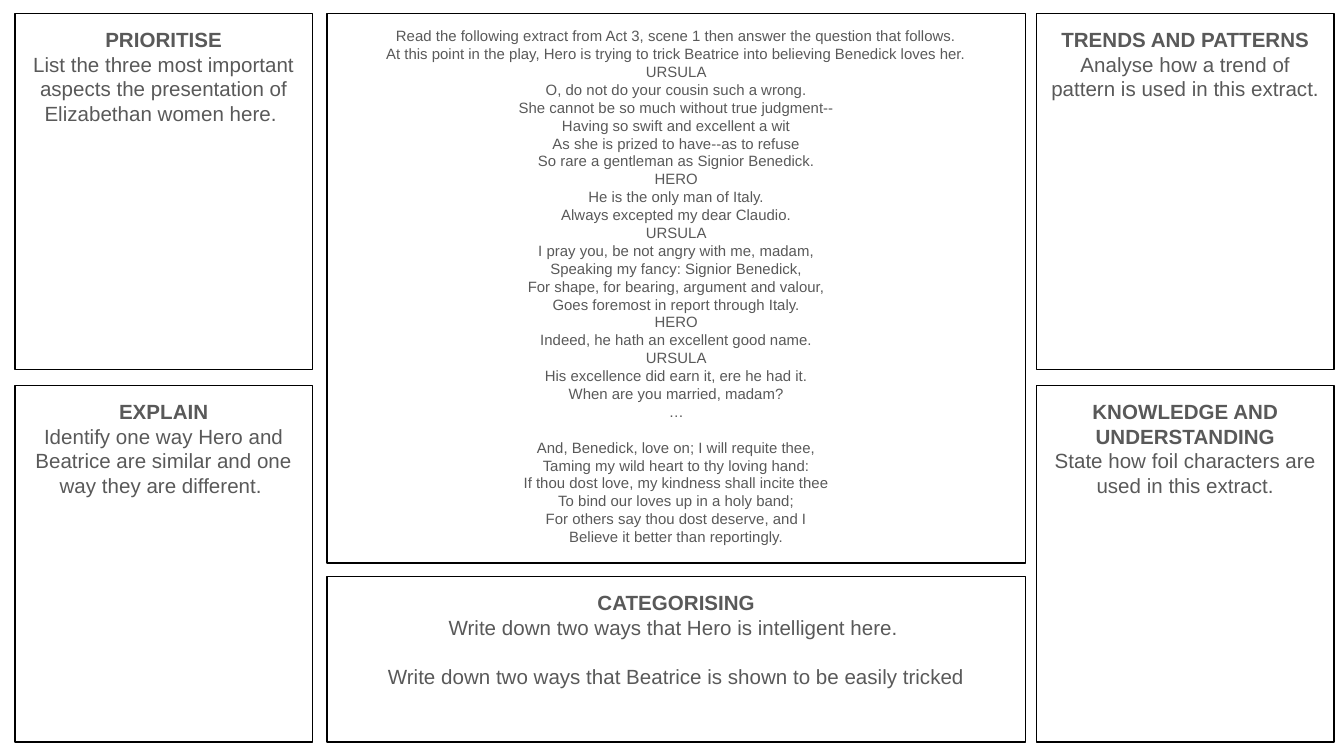
from pptx import Presentation
from pptx.dml.color import RGBColor
from pptx.enum.text import MSO_ANCHOR, MSO_AUTO_SIZE, PP_ALIGN
from pptx.util import Pt

COLORS = {"background": "FFFFFF", "border": "000000", "text": "595959"}
FONT = "Arial"
INSET = 7.2

TOP, BOTTOM = 7.2, 397.5
LEFT_COLUMN, CENTRE_COLUMN, RIGHT_COLUMN = 8.1, 175.1, 555.4
SIDE_WIDTH, CENTRE_WIDTH = 159.2, 374.4
SIDE_HEIGHT, EXTRACT_HEIGHT, CATEGORISING_HEIGHT = 190.9, 294.5, 88.7

SIDE_PROMPTS = [
    (LEFT_COLUMN, [
        ("PRIORITISE", "List the three most important aspects the presentation of Elizabethan women here. "),
        ("EXPLAIN", "Identify one way Hero and Beatrice are similar and one way they are different. "),
    ]),
    (RIGHT_COLUMN, [
        ("TRENDS AND PATTERNS", "Analyse how a trend of pattern is used in this extract."),
        ("KNOWLEDGE AND UNDERSTANDING", "State how foil characters are used in this extract."),
    ]),
]

CATEGORISING_TASKS = [
    "Write down two ways that Hero is intelligent here. ",
    "Write down two ways that Beatrice is shown to be easily tricked",
]

DIALOGUE = """Read the following extract from Act 3, scene 1 then answer the question that follows.
At this point in the play, Hero is trying to trick Beatrice into believing Benedick loves her.
URSULA
O, do not do your cousin such a wrong.
She cannot be so much without true judgment--
Having so swift and excellent a wit
As she is prized to have--as to refuse
So rare a gentleman as Signior Benedick.
HERO
He is the only man of Italy.
Always excepted my dear Claudio.
URSULA
I pray you, be not angry with me, madam,
Speaking my fancy: Signior Benedick,
For shape, for bearing, argument and valour,
Goes foremost in report through Italy.
HERO
Indeed, he hath an excellent good name.
URSULA
His excellence did earn it, ere he had it.
When are you married, madam?
…"""

SOLILOQUY = """And, Benedick, love on; I will requite thee,
Taming my wild heart to thy loving hand:
If thou dost love, my kindness shall incite thee
To bind our loves up in a holy band;
For others say thou dost deserve, and I
Believe it better than reportingly."""


def color(name):
    return RGBColor.from_string(COLORS[name])


def add_panel(slide, box):
    slide.shapes.clone_placeholder(slide.slide_layout.placeholders[1])
    shape = slide.shapes[-1]
    shape.left, shape.top, shape.width, shape.height = (Pt(length) for length in box)
    shape.line.color.rgb = color("border")
    shape.line.width = Pt(0.75)
    text_frame = shape.text_frame
    text_frame.word_wrap = True
    text_frame.auto_size = MSO_AUTO_SIZE.NONE
    text_frame.vertical_anchor = MSO_ANCHOR.TOP
    text_frame.margin_left = text_frame.margin_right = Pt(INSET)
    text_frame.margin_top = text_frame.margin_bottom = Pt(INSET)
    return text_frame


def write_paragraphs(text_frame, texts, size):
    for index, text in enumerate(texts):
        paragraph = text_frame.add_paragraph() if index else text_frame.paragraphs[0]
        paragraph.text = text
        paragraph.alignment = PP_ALIGN.CENTER
        paragraph.line_spacing = 1.0
        paragraph.space_before = paragraph.space_after = Pt(0)
        for run in paragraph.runs:
            run.font.name = FONT
            run.font.size = Pt(size)
            run.font.bold = False
            run.font.color.rgb = color("text")


def add_prompt(slide, box, heading, tasks):
    text_frame = add_panel(slide, box)
    write_paragraphs(text_frame, [heading, *tasks], 11)
    text_frame.paragraphs[0].runs[0].font.bold = True
    for paragraph in text_frame.paragraphs[2:]:
        paragraph.space_before = Pt(13.2)


def add_extract(slide, box):
    text_frame = add_panel(slide, box)
    write_paragraphs(text_frame, [DIALOGUE, SOLILOQUY], 8)
    text_frame.paragraphs[1].space_before = Pt(9.6)


def main():
    presentation = Presentation()
    presentation.slide_width, presentation.slide_height = Pt(720), Pt(405)
    slide = presentation.slides.add_slide(presentation.slide_layouts[0])
    slide.background.fill.solid()
    slide.background.fill.fore_color.rgb = color("background")
    for placeholder in list(slide.placeholders):
        placeholder.element.getparent().remove(placeholder.element)

    for left, prompts in SIDE_PROMPTS:
        for top, (heading, task) in zip((TOP, BOTTOM - SIDE_HEIGHT), prompts):
            add_prompt(slide, (left, top, SIDE_WIDTH, SIDE_HEIGHT), heading, [task])
    categorising_box = (CENTRE_COLUMN, BOTTOM - CATEGORISING_HEIGHT, CENTRE_WIDTH, CATEGORISING_HEIGHT)
    add_prompt(slide, categorising_box, "CATEGORISING", CATEGORISING_TASKS)
    add_extract(slide, (CENTRE_COLUMN, TOP, CENTRE_WIDTH, EXTRACT_HEIGHT))
    presentation.save("out.pptx")


if __name__ == "__main__":
    main()
